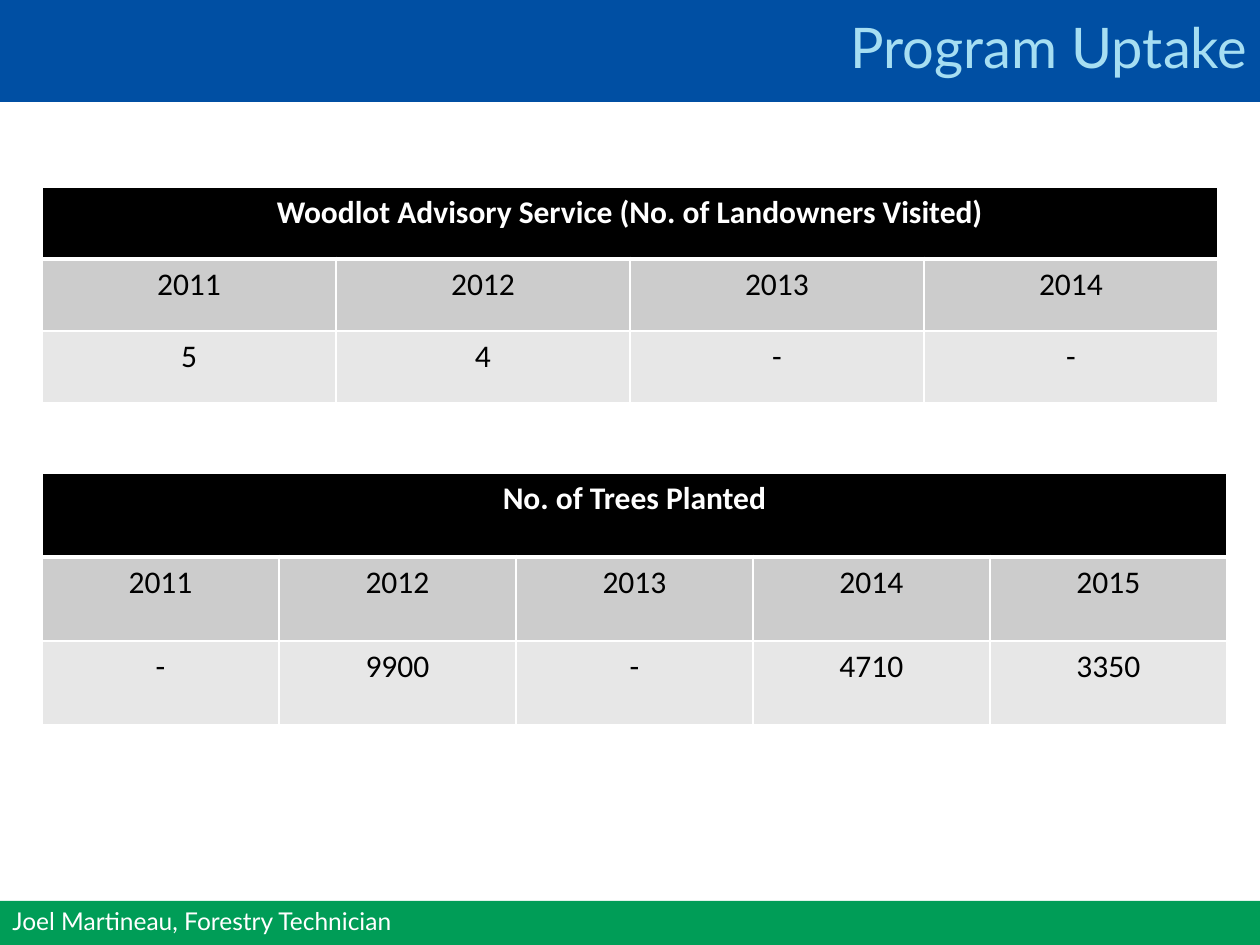
from lxml import etree
from pptx import Presentation
from pptx.dml.color import RGBColor
from pptx.enum.shapes import MSO_SHAPE
from pptx.enum.text import MSO_ANCHOR, PP_ALIGN
from pptx.oxml.ns import qn
from pptx.util import Emu, Pt

RECT = MSO_SHAPE.RECTANGLE
LEFT, MID, RIGHT = PP_ALIGN.LEFT, PP_ALIGN.CENTER, PP_ALIGN.RIGHT
TOP, CENTER = MSO_ANCHOR.TOP, MSO_ANCHOR.MIDDLE
SCALE = 914400 / 126  # EMU in one px


def px(*nums):
    return [Emu(round(n * SCALE)) for n in nums]


def style(para, align, color, form):
    para.alignment = align
    for key, val in form.items():
        setattr(para.font, key, val)
    para.font.color.rgb = RGBColor.from_string(color)


deck = Presentation()
deck.slide_width, deck.slide_height = px(1260, 945)
slide = deck.slides.add_slide(deck.slide_layouts[6])
shapes = slide.shapes

# Footer and header bands
for top, high, color in [(901, 48, "009D57"), (-4, 106, "004FA3")]:
    band = shapes.add_shape(RECT, *px(0, top, 1260, high))
    band.shadow.inherit = False
    band.fill.solid()
    band.fill.fore_color.rgb = RGBColor.from_string(color)
    band.line.fill.background()

# Title and presenter
texts = [
    ("Program Uptake", (451, -5, 809, 102), 32, "A6DEF2", RIGHT, CENTER),
    ("Joel Martineau, Forestry Technician", (0, 900, 577, 44), 14, "FFFFFF", LEFT, TOP),
]
for text, spot, size, color, align, anchor in texts:
    frame = shapes.add_textbox(*px(*spot)).text_frame
    frame.word_wrap = True
    frame.vertical_anchor = anchor
    frame.text = text
    style(frame.paragraphs[0], align, color, {"name": "Lato", "size": Pt(size)})

# Tables: top, column width, row height, rows
tables = [
    (187, 294, 72, [
        ["Woodlot Advisory Service (No. of Landowners Visited)"],
        ["2011", "2012", "2013", "2014"],
        ["5", "4", "-", "-"],
    ]),
    (473, 237, 84, [
        ["No. of Trees Planted"],
        ["2011", "2012", "2013", "2014", "2015"],
        ["-", "9900", "-", "4710", "3350"],
    ]),
]
fills = ["000000", "CCCCCC", "E7E7E7"]
for top, wide, high, rows in tables:
    count = len(rows[1])
    spot = px(42, top, wide * count, high * len(rows))
    table = shapes.add_table(len(rows), count, *spot).table
    for col in table.columns:
        col.width = px(wide)[0]
    for r, row in enumerate(rows):
        table.rows[r].height = px(high)[0]
        for c in range(count):
            cell = table.cell(r, c)
            # White borders, thick between heading and body
            props = cell._tc.get_or_add_tcPr()
            for side in "LRTB":
                thick = (r, side) in [(0, "B"), (1, "T")]
                line = etree.SubElement(props, qn(f"a:ln{side}"), w=str(Pt(3 if thick else 1)))
                fill = etree.SubElement(line, qn("a:solidFill"))
                etree.SubElement(fill, qn("a:srgbClr"), val="FFFFFF")
            cell.fill.solid()
            cell.fill.fore_color.rgb = RGBColor.from_string(fills[r])
            if c < len(row):
                cell.text = row[c]
            form = {"name": "Calibri", "size": Pt(18), "bold": r == 0}
            color = "000000" if r else "FFFFFF"
            style(cell.text_frame.paragraphs[0], MID, color, form)
    table.cell(0, 0).merge(table.cell(0, count - 1))

deck.save("out.pptx")
